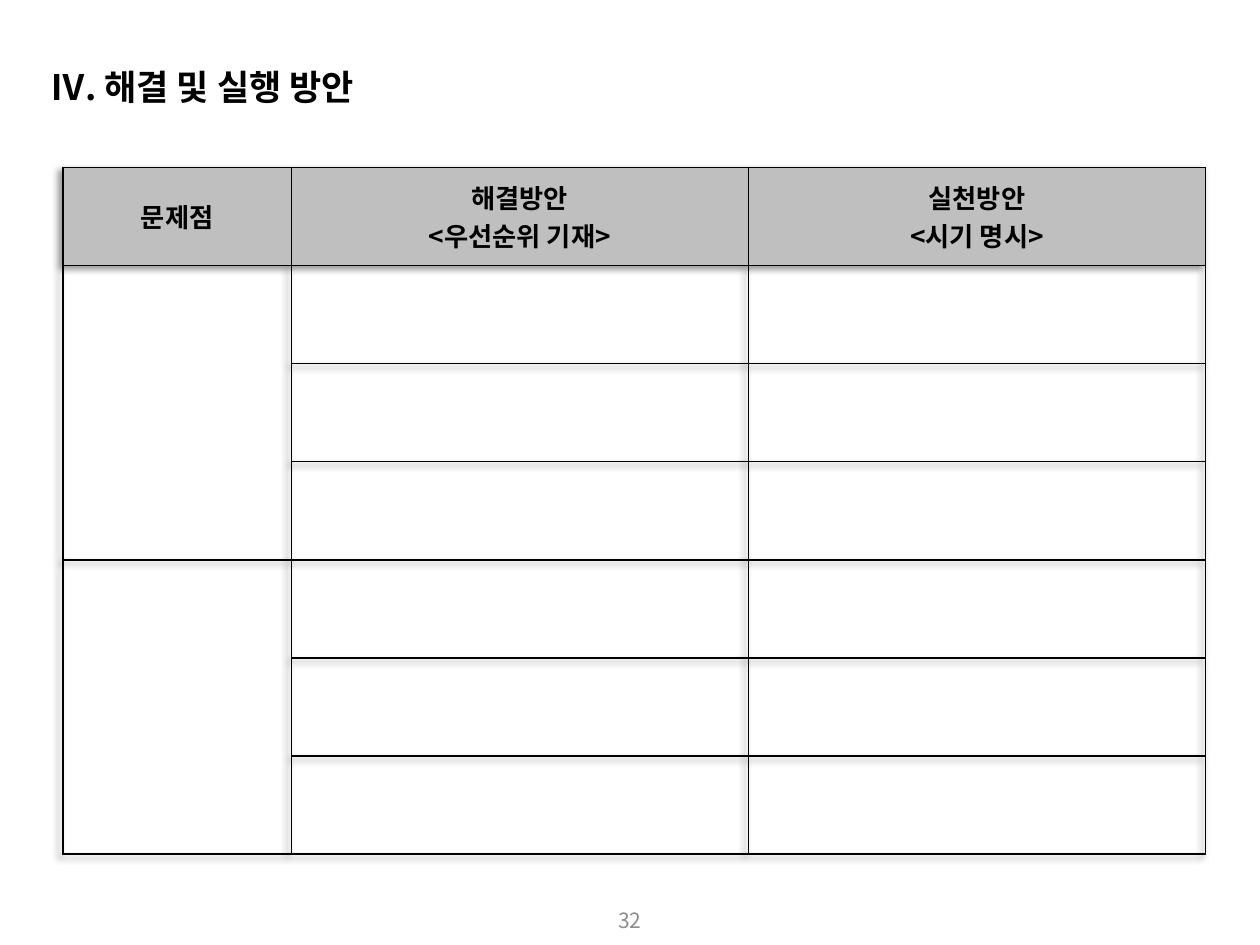
from lxml import etree
from pptx import Presentation
from pptx.dml.color import RGBColor
from pptx.enum import text as t
from pptx.oxml import parse_xml
from pptx.oxml.ns import nsdecls, qn
from pptx.util import Pt

FONT = "Noto Sans CJK KR"
HEADS = ["문제점", "해결방안\n<우선순위 기재>", "실천방안\n<시기 명시>"]
COLS = [130.5, 261.2, 261.2]
ROWS, HIGH = 7, 56.08
SPANS = [(1, 3), (4, 6)]


def color(code):
    return RGBColor.from_string(code)


def write(frame, words, size=15, ink="000000", bold=True, align=None, space=None):
    frame.text = words
    for para in frame.paragraphs:
        para.alignment = align
        para.line_spacing = space
        for run in para.runs:
            font = run.font
            font.name, font.size, font.bold = FONT, Pt(size), bold
            font.color.rgb = color(ink)
            for tag in ("a:ea", "a:cs"):
                etree.SubElement(font._element, qn(tag), typeface=FONT)


def label(slide, words, box, wrap=True, anchor=t.MSO_ANCHOR.TOP, **style):
    frame = slide.shapes.add_textbox(*map(Pt, box)).text_frame
    frame.word_wrap = wrap
    frame.vertical_anchor = anchor
    write(frame, words, **style)
    return frame


def border(cell, width=1, ink="000000"):
    props = cell._tc.get_or_add_tcPr()
    for place, side in enumerate("LRTB"):
        props.insert(place, parse_xml(
            f'<a:ln{side} {nsdecls("a")} w="{Pt(width)}"><a:solidFill>'
            f'<a:srgbClr val="{ink}"/></a:solidFill></a:ln{side}>'))


def shade(table):
    """Give the table a soft shadow towards the lower left."""
    table._tbl.tblPr.insert(0, parse_xml(
        f'<a:effectLst {nsdecls("a")}><a:outerShdw blurRad="{Pt(4)}" '
        f'dist="{Pt(3)}" dir="8100000" algn="tr" rotWithShape="0">'
        '<a:srgbClr val="000000"><a:alpha val="40000"/></a:srgbClr>'
        '</a:outerShdw></a:effectLst>'))


def grid(slide):
    table = slide.shapes.add_table(
        ROWS, len(COLS), Pt(36), Pt(95.6), Pt(sum(COLS)), Pt(ROWS * HIGH)).table
    table.first_row = table.horz_banding = False
    shade(table)
    for col, width in zip(table.columns, COLS):
        col.width = Pt(width)
    for row in table.rows:
        row.height = Pt(HIGH)
    for cell in table.iter_cells():
        cell.fill.background()
        border(cell)
    for cell, words in zip(table.rows[0].cells, HEADS):
        cell.fill.solid()
        cell.fill.fore_color.rgb = color("BFBFBF")
        cell.vertical_anchor = t.MSO_ANCHOR.MIDDLE
        write(cell.text_frame, words, align=t.PP_ALIGN.CENTER)
    for top, end in SPANS:
        table.cell(top, 0).merge(table.cell(end, 0))


def main():
    deck = Presentation()
    deck.slide_width, deck.slide_height = Pt(720), Pt(540)
    slide = deck.slides.add_slide(deck.slide_layouts[6])
    label(slide, "32", (279, 511.2, 162, 28.8), anchor=t.MSO_ANCHOR.MIDDLE,
          size=12, ink="8C8C8C", bold=False, align=t.PP_ALIGN.CENTER)
    grid(slide)
    title = label(slide, "Ⅳ. 해결 및 실행 방안", (21.6, 10, 203.8, 55.4),
                  wrap=False, size=20, space=2.0)
    title.auto_size = t.MSO_AUTO_SIZE.SHAPE_TO_FIT_TEXT
    deck.save("out.pptx")


if __name__ == "__main__":
    main()
